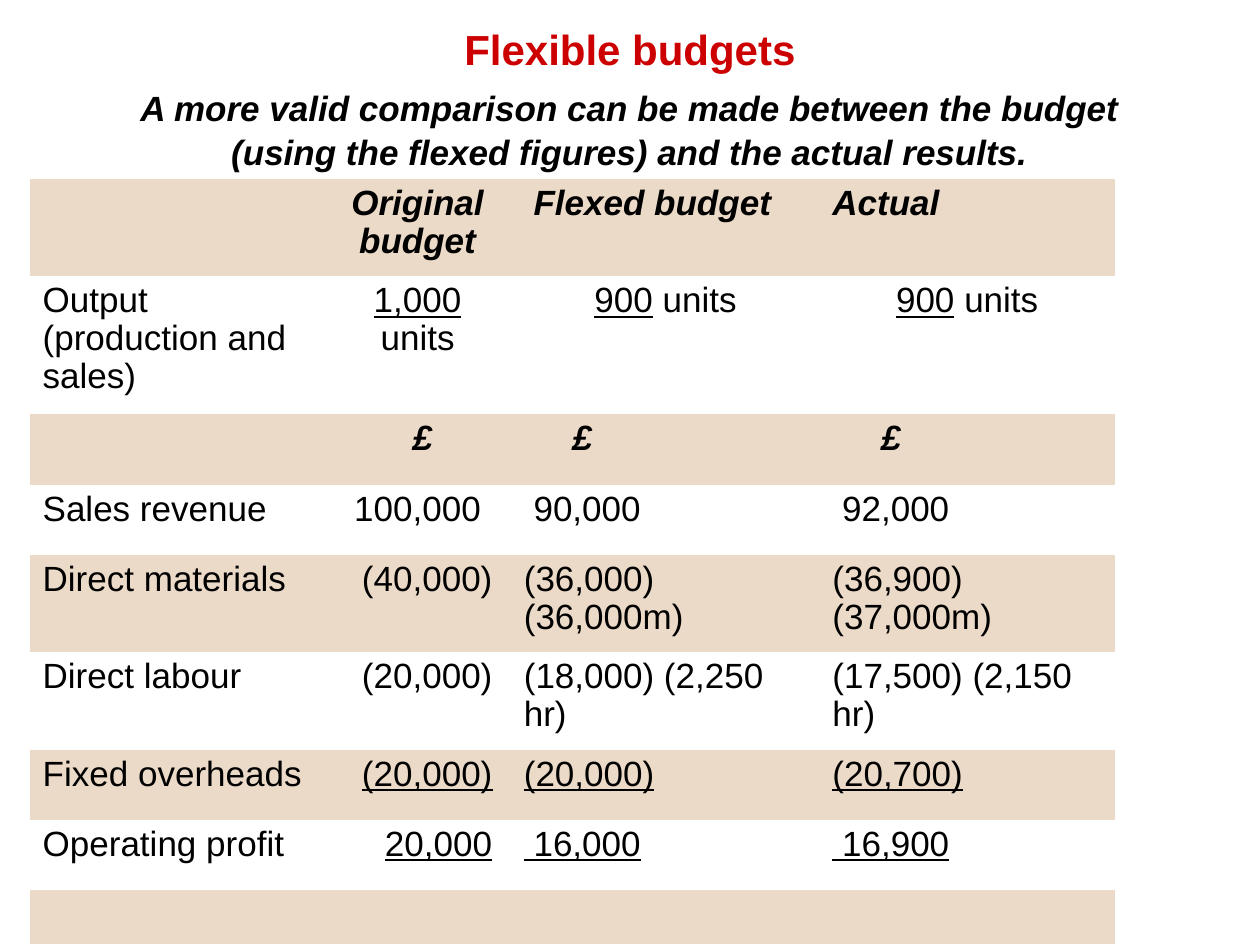
from pptx import Presentation
from pptx.dml.color import RGBColor
from pptx.enum.text import MSO_ANCHOR, PP_ALIGN
from pptx.oxml.ns import qn
from pptx.util import Cm, Pt

LEFT, MID = PP_ALIGN.LEFT, PP_ALIGN.CENTER
TOP = MSO_ANCHOR.TOP
RED = RGBColor(0xCC, 0x00, 0x00)
BLACK = RGBColor(0x00, 0x00, 0x00)
SAND = RGBColor(0xEC, 0xDA, 0xC8)
NO_GRID = "{2D5ABB26-0587-4C30-8999-92F81FD0307C}"

# Content: text between underscores is underlined
TITLE = "Flexible budgets"
LEAD = ("A more valid comparison can be made between the budget "
        "(using the flexed figures) and the actual results.")
ROWS = [
    ("", "Original budget", " Flexed budget", "Actual"),
    ("Output (production and sales)", "_1,000_ units", "_900_ units", "_900_ units"),
    ("", " £", "£", "£"),
    ("Sales revenue", "100,000", " 90,000", " 92,000"),
    ("Direct materials", "(40,000)", "(36,000) (36,000m)", "(36,900) (37,000m)"),
    ("Direct labour", "(20,000)", "(18,000) (2,250 hr)", "(17,500) (2,150 hr)"),
    ("Fixed overheads", "_(20,000)_", "_(20,000)_", "_(20,700)_"),
    ("Operating profit", "_20,000_", "_ 16,000_", "_ 16,900_"),
    ("", "", "", ""),
]
HEADS = (0, 2)
OUTPUT, PROFIT = 1, 7

# Sizes in centimetres
WIDTHS = (5.92, 3.78, 6.22, 5.94)
HEIGHTS = (1.96, 2.78, 1.42, 1.42, 1.96, 1.96, 1.42, 1.42, 1.09)
PAD = 0.25
INDENTS = {(2, 2): 0.98, (2, 3): 0.98, (PROFIT, 1): 0.98,
           (4, 1): 0.39, (5, 1): 0.39, (6, 1): 0.39}


def write(frame, text, size=20, color=BLACK, bold=False, slant=False,
          align=LEFT, space=1.0):
    frame.word_wrap = True
    para = frame.paragraphs[0]
    para.alignment = align
    para.line_spacing = space
    for i, part in enumerate(text.split("_")):
        if not part:
            continue
        run = para.add_run()
        run.text = part
        font = run.font
        font.name, font.size = "Arial", Pt(size)
        font.bold, font.italic = bold, slant
        font.underline = i % 2 == 1
        font.color.rgb = color


deck = Presentation()
deck.slide_width, deck.slide_height = Cm(25.4), Cm(19.05)
slide = deck.slides.add_slide(deck.slide_layouts[6])
shapes = slide.shapes

# Title and lead
box = shapes.add_textbox(Cm(0.61), Cm(0.3), Cm(24.18), Cm(1.27))
write(box.text_frame, TITLE, size=24, color=RED, bold=True, align=MID, space=1.05)
box = shapes.add_textbox(Cm(2.18), Cm(1.57), Cm(21.03), Cm(1.96))
write(box.text_frame, LEAD, bold=True, slant=True, align=MID, space=1.05)

# Budget table
grid = shapes.add_table(len(ROWS), len(WIDTHS), Cm(0.61), Cm(3.61),
                        Cm(sum(WIDTHS)), Cm(sum(HEIGHTS)))
for style in grid.element.iter(qn("a:tableStyleId")):
    style.text = NO_GRID
table = grid.table
table.first_row = table.horz_banding = False
for col, width in zip(table.columns, WIDTHS):
    col.width = Cm(width)
for row, height in zip(table.rows, HEIGHTS):
    row.height = Cm(height)

for r, row in enumerate(ROWS):
    for c, text in enumerate(row):
        cell = table.cell(r, c)
        cell.vertical_anchor = TOP
        cell.margin_left = Cm(PAD + INDENTS.get((r, c), 0))
        if r % 2 == 0:
            cell.fill.solid()
            cell.fill.fore_color.rgb = SAND
        else:
            cell.fill.background()
        mid = (c == 1 and r != PROFIT) or (c > 1 and r == OUTPUT)
        head = r in HEADS
        write(cell.text_frame, text, bold=head, slant=head,
              align=MID if mid else LEFT, space=0.97)

deck.save("out.pptx")
